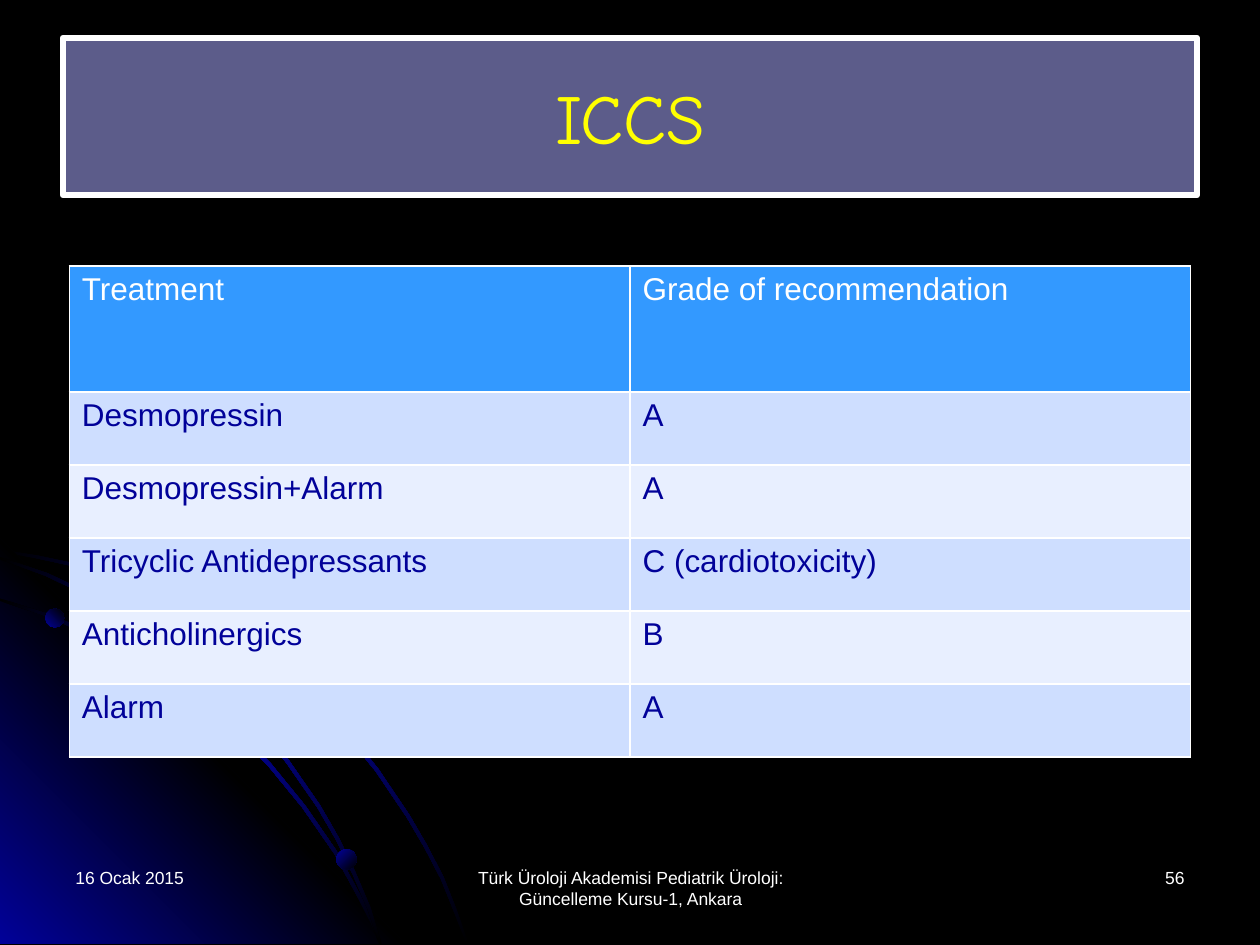
from pptx import Presentation
from pptx import util as u
from pptx.dml.color import RGBColor
from pptx.enum import shapes, text
from pptx.oxml import parse_xml
from pptx.oxml.ns import nsdecls, qn

CELL = u.Inches(0.5)  # grid of 20 columns by 15 rows
COLUMNS, ROWS = 20, 15
WHITE, BLACK, NAVY, YELLOW = "FFFFFF", "000000", "010199", "FFFF00"
PANEL, HEADER, BANDS = "5C5C8A", "3399FF", ("CEDEFF", "E8EFFF")
LEFT, CENTER, RIGHT = text.PP_ALIGN.LEFT, text.PP_ALIGN.CENTER, text.PP_ALIGN.RIGHT


def color(value):
    return RGBColor.from_string(value)


def grid(*lengths):
    return [u.Emu(round(length * CELL)) for length in lengths]


class SlideBuilder:
    def __init__(self, slide, font="Arial"):
        self.slide = slide
        self.font = font

    def background(self, fill):
        self.slide.background.fill.solid()
        self.slide.background.fill.fore_color.rgb = color(fill)

    def add_words(self, frame, words, size, ink, align=LEFT, font=None):
        frame.word_wrap = True
        paragraph = frame.paragraphs[0]
        paragraph.alignment = align
        run = paragraph.add_run()
        run.text = words
        run.font.size = u.Pt(size)
        run.font.name = font or self.font
        run.font.color.rgb = color(ink)

    def shade(self, shape, colors, angle):
        """Spread the colours evenly; the angle runs clockwise."""
        shape.shadow.inherit = False
        shape.line.fill.background()
        shape.fill.gradient()
        shape.fill.gradient_angle = 360 - angle
        stops = shape._element.spPr.find(".//" + qn("a:gsLst"))
        stops.clear()
        for index, value in enumerate(colors):
            position = 100000 * index // (len(colors) - 1)
            stops.append(parse_xml(
                f'<a:gs {nsdecls("a")} pos="{position}"><a:srgbClr val="{value}"/></a:gs>'))

    def outline(self, points, colors, angle):
        corners = [grid(*point) for point in points]
        builder = self.slide.shapes.build_freeform(*corners[0], scale=1.0)
        builder.add_line_segments(corners[1:], close=True)
        self.shade(builder.convert_to_shape(), colors, angle)

    def ribbon(self, edge, width=0.04):
        """A thin band whose far edge is the near edge moved up and right."""
        far = [(x + width if x else 0, y - width) for x, y in edge]
        far[-1] = (edge[-1][0] + width, edge[-1][1])
        self.outline(edge + far[::-1], (BLACK, NAVY, BLACK), 45)

    def ball(self, left, top, size, angle):
        shape = self.slide.shapes.add_shape(
            shapes.MSO_SHAPE.OVAL, *grid(left, top, size, size))
        self.shade(shape, (NAVY, BLACK), angle)

    def title(self, words, *place):
        shape = self.slide.shapes.add_shape(shapes.MSO_SHAPE.RECTANGLE, *grid(*place))
        shape.shadow.inherit = False
        shape.fill.solid()
        shape.fill.fore_color.rgb = color(PANEL)
        shape.line.color.rgb = color(WHITE)
        shape.line.width = u.Pt(3.5)
        shape.text_frame.vertical_anchor = text.MSO_ANCHOR.MIDDLE
        self.add_words(shape.text_frame, words, 40, YELLOW, CENTER, "Comic Neue")

    def label(self, words, align, *place):
        box = self.slide.shapes.add_textbox(*grid(*place))
        self.add_words(box.text_frame, words, 10, WHITE, align)

    def borders(self, cell, ink, points):
        properties = cell._tc.get_or_add_tcPr()
        for index, side in enumerate(("lnL", "lnR", "lnT", "lnB")):
            properties.insert(index, parse_xml(
                f'<a:{side} {nsdecls("a")} w="{u.Pt(points)}"><a:solidFill>'
                f'<a:srgbClr val="{ink}"/></a:solidFill></a:{side}>'))

    def table(self, records, left, top, width, header_height, row_height):
        height = header_height + row_height * (len(records) - 1)
        table = self.slide.shapes.add_table(
            len(records), len(records[0]), *grid(left, top, width, height)).table
        table.first_row = table.horz_banding = False
        for row_index, record in enumerate(records):
            is_header = row_index == 0
            table.rows[row_index].height = grid(header_height if is_header else row_height)[0]
            for column_index, words in enumerate(record):
                cell = table.cell(row_index, column_index)
                cell.fill.solid()
                cell.fill.fore_color.rgb = color(
                    HEADER if is_header else BANDS[(row_index - 1) % 2])
                self.borders(cell, WHITE, 1)
                self.add_words(cell.text_frame, words, 18, WHITE if is_header else NAVY)


OUTER_ARC = [(0, 8.76), (0.56, 8.86), (1.12, 8.98), (1.94, 9.22), (2.7, 9.56),
             (3.46, 9.98), (4.16, 10.46), (4.82, 10.98), (5.42, 11.58), (5.96, 12.24),
             (6.46, 12.98), (6.74, 13.46), (7, 13.96), (7.2, 14.46), (7.4, 14.98)]
INNER_ARC = [(0, 9.54), (0.78, 9.8), (1.54, 10.14), (2.3, 10.56), (3, 11.02),
             (3.66, 11.56), (4.26, 12.16), (4.8, 12.82), (5.3, 13.54), (5.7, 14.28),
             (5.88, 14.64), (6.02, 14.98)]
MIDDLE_ARC = [(0, 8.88), (0.72, 9.14), (1.48, 9.5), (2.18, 9.88), (2.84, 10.36),
              (3.46, 10.88), (4.04, 11.5), (4.54, 12.1), (5.04, 12.82), (5.34, 13.34),
              (5.6, 13.88), (5.84, 14.44), (6.02, 14.98)]
TREATMENTS = [
    ("Treatment", "Grade of recommendation"),
    ("Desmopressin", "A"),
    ("Desmopressin+Alarm", "A"),
    ("Tricyclic Antidepressants", "C (cardiotoxicity)"),
    ("Anticholinergics", "B"),
    ("Alarm", "A"),
]


def main():
    presentation = Presentation()
    presentation.slide_width, presentation.slide_height = grid(COLUMNS, ROWS)
    builder = SlideBuilder(presentation.slides.add_slide(presentation.slide_layouts[6]))

    # Backdrop: corner glow, arcs and balls
    builder.background(BLACK)
    builder.ribbon(OUTER_ARC)
    builder.outline([(6.44, 14.98), (0, 14.98), (0, 8.54)], (NAVY, BLACK, NAVY), 315)
    builder.ribbon(INNER_ARC)
    builder.ribbon(MIDDLE_ARC)
    builder.ball(0.72, 9.66, 0.3, 315)
    builder.ball(5.34, 13.48, 0.32, 45)

    # Title and table
    builder.title("ICCS", 1, 0.6, 18, 2.5)
    builder.table(TREATMENTS, 1.1, 4.22, 17.8, 2, 1.16)

    # Footer
    builder.label("16 Ocak 2015", LEFT, 1, 13.66, 4.66, 1)
    builder.label("56", RIGHT, 14.34, 13.66, 4.66, 1)
    builder.label("Türk Üroloji Akademisi Pediatrik Üroloji: Güncelleme Kursu-1, Ankara",
                  CENTER, 6.84, 13.66, 6.34, 1)

    presentation.save("out.pptx")


if __name__ == "__main__":
    main()
